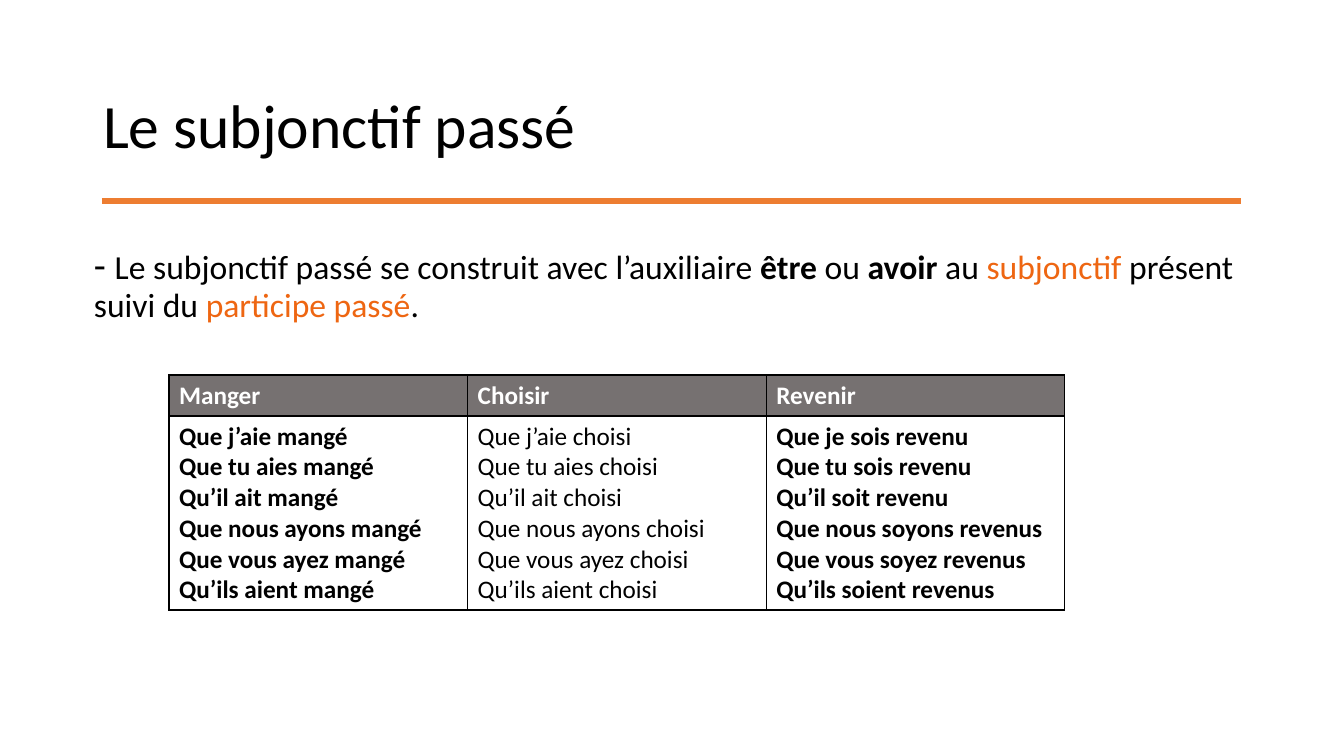
from lxml.etree import SubElement
from pptx import Presentation
from pptx.dml.color import RGBColor
from pptx.enum.shapes import MSO_CONNECTOR
from pptx.enum.text import MSO_ANCHOR
from pptx.oxml.ns import qn
from pptx.util import Pt

SCALE = 914400 / 100.8
FONT = "Calibri"
BLACK = RGBColor(0, 0, 0)
WHITE = RGBColor(255, 255, 255)
GRAY = RGBColor(0x76, 0x71, 0x71)
ORANGE = RGBColor(0xEE, 0x66, 0x12)
RULE = RGBColor(0xED, 0x7D, 0x31)

# Text, size, bold, colour
INTRO = [
    ("- ", 28, False, BLACK),
    ("Le subjonctif passé se construit avec l’auxiliaire ", 24, False, BLACK),
    ("être", 24, True, BLACK),
    (" ou ", 24, False, BLACK),
    ("avoir", 24, True, BLACK),
    (" au ", 24, False, BLACK),
    ("subjonctif", 24, False, ORANGE),
    (" présent suivi du ", 24, False, BLACK),
    ("participe passé", 24, False, ORANGE),
    (".", 24, False, BLACK),
]

# Verb, bold forms, forms
VERBS = [
    ("Manger", True, ["Que j’aie mangé", "Que tu aies mangé", "Qu’il ait mangé",
                      "Que nous ayons mangé", "Que vous ayez mangé",
                      "Qu’ils aient mangé"]),
    ("Choisir", False, ["Que j’aie choisi", "Que tu aies choisi", "Qu’il ait choisi",
                        "Que nous ayons choisi", "Que vous ayez choisi",
                        "Qu’ils aient choisi"]),
    ("Revenir", True, ["Que je sois revenu", "Que tu sois revenu", "Qu’il soit revenu",
                       "Que nous soyons revenus", "Que vous soyez revenus",
                       "Qu’ils soient revenus"]),
]


def px(num):
    return round(num * SCALE)


def style(run, size, bold, color):
    font = run.font
    font.name, font.size, font.bold = FONT, Pt(size), bold
    font.color.rgb = color


def add_title(slide, text, left, top, width, height):
    title = slide.shapes.title
    title.left, title.top = px(left), px(top)
    title.width, title.height = px(width), px(height)
    frame = title.text_frame
    frame.text = text
    frame.word_wrap = True
    frame.vertical_anchor = MSO_ANCHOR.MIDDLE
    para = frame.paragraphs[0]
    para.alignment = 1
    para.line_spacing = 0.9
    style(para.runs[0], 44, False, BLACK)


def add_text(slide, parts, left, top, width, height):
    box = slide.shapes.add_textbox(px(left), px(top), px(width), px(height))
    box.text_frame.word_wrap = True
    para = box.text_frame.paragraphs[0]
    para.line_spacing = 0.9
    for text, size, bold, color in parts:
        run = para.add_run()
        run.text = text
        style(run, size, bold, color)


def add_rule(slide, left, right, top):
    line = slide.shapes.add_connector(
        MSO_CONNECTOR.STRAIGHT, px(left), px(top), px(right), px(top))
    line.line.color.rgb = RULE
    line.line.width = Pt(4.5)
    SubElement(line._element.spPr, qn("a:effectLst"))


def add_edges(cell):
    props = cell._tc.get_or_add_tcPr()
    for side in ("lnL", "lnR", "lnT", "lnB"):
        edge = SubElement(props, qn(f"a:{side}"), w=str(Pt(1)))
        fill = SubElement(edge, qn("a:solidFill"))
        SubElement(fill, qn("a:srgbClr"), val=str(BLACK))


def fill_cell(cell, lines, bold, color, back):
    add_edges(cell)
    cell.fill.solid()
    cell.fill.fore_color.rgb = back
    cell.text_frame.text = "\n".join(lines)
    for para in cell.text_frame.paragraphs:
        style(para.runs[0], 18, bold, color)


def add_verbs(slide, left, top, width, head, body):
    frame = slide.shapes.add_table(
        2, len(VERBS), px(left), px(top), px(width), px(head + body))
    table = frame.table
    table.first_row = table.horz_banding = False
    table.rows[0].height, table.rows[1].height = px(head), px(body)
    for col, (verb, bold, forms) in enumerate(VERBS):
        fill_cell(table.cell(0, col), [verb], True, WHITE, GRAY)
        fill_cell(table.cell(1, col), forms, bold, BLACK, WHITE)


def main():
    deck = Presentation()
    deck.slide_width, deck.slide_height = px(1344), px(756)
    slide = deck.slides.add_slide(deck.slide_layouts[5])
    # Heading
    add_title(slide, "Le subjonctif passé", 93, 40, 1142, 178)
    # Explanation
    add_text(slide, INTRO, 84, 241, 1168, 441)
    # Conjugations
    add_verbs(slide, 169, 375, 896, 41, 194)
    # Line under the heading
    add_rule(slide, 102, 1241, 201)
    deck.save("out.pptx")


if __name__ == "__main__":
    main()
